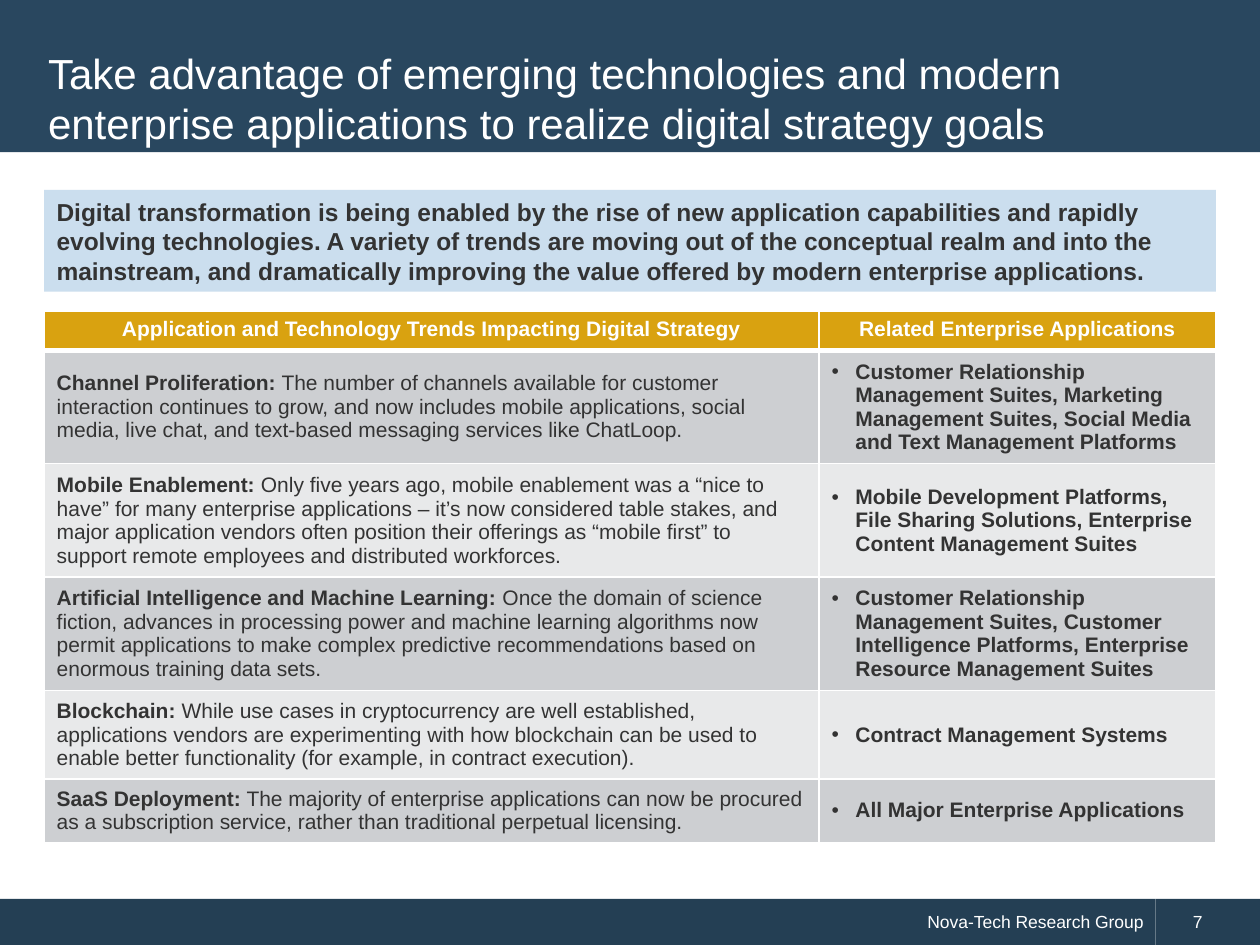
from lxml import etree
from pptx import Presentation
from pptx.dml.color import RGBColor
from pptx.enum.shapes import MSO_SHAPE
from pptx.enum.text import MSO_ANCHOR, PP_ALIGN
from pptx.oxml.ns import qn
from pptx.util import Cm, Pt

RECTANGLE = MSO_SHAPE.RECTANGLE
MIDDLE = MSO_ANCHOR.MIDDLE
TOP = MSO_ANCHOR.TOP
LEFT, CENTER, RIGHT = PP_ALIGN.LEFT, PP_ALIGN.CENTER, PP_ALIGN.RIGHT

WHITE = RGBColor(0xFF, 0xFF, 0xFF)
DARK_TEXT = RGBColor(0x33, 0x33, 0x33)
TITLE_BLUE = RGBColor(0x29, 0x47, 0x5F)
FOOTER_BLUE = RGBColor(0x24, 0x3F, 0x54)
PALE_BLUE = RGBColor(0xCB, 0xDE, 0xEE)
GOLD = RGBColor(0xD9, 0xA2, 0x10)
ROW_FILLS = (RGBColor(0xCD, 0xCF, 0xD2), RGBColor(0xE8, 0xE9, 0xEA))

# Font formats
TITLE_FONT = {"name": "Arial", "size": Pt(24), "bold": False}
BANNER_FONT = {"name": "Arial", "size": Pt(14), "bold": True}
FOOTER_FONT = {"name": "Arial", "size": Pt(10), "bold": False}
STRONG_FONT = {"name": "Arial", "size": Pt(12), "bold": True}
PLAIN_FONT = {**STRONG_FONT, "bold": False}

TITLE = ("Take advantage of emerging technologies and modern enterprise "
         "applications to realize digital strategy goals")
BANNER = ("Digital transformation is being enabled by the rise of new application "
          "capabilities and rapidly evolving technologies. A variety of trends are "
          "moving out of the conceptual realm and into the mainstream, and "
          "dramatically improving the value offered by modern enterprise applications.")
HEADERS = ("Application and Technology Trends Impacting Digital Strategy",
           "Related Enterprise Applications")

# Trend, description, related applications, row height in cm
TRENDS = [
    ("Channel Proliferation:",
     "The number of channels available for customer interaction continues to grow, "
     "and now includes mobile applications, social media, live chat, and text-based "
     "messaging services like ChatLoop.",
     "Customer Relationship Management Suites, Marketing Management Suites, "
     "Social Media and Text Management Platforms", 2.14),
    ("Mobile Enablement:",
     "Only five years ago, mobile enablement was a “nice to have” for many enterprise "
     "applications – it’s now considered table stakes, and major application vendors "
     "often position their offerings as “mobile first” to support remote employees "
     "and distributed workforces.",
     "Mobile Development Platforms, File Sharing Solutions, Enterprise Content "
     "Management Suites", 2.14),
    ("Artificial Intelligence and Machine Learning:",
     "Once the domain of science fiction, advances in processing power and machine "
     "learning algorithms now permit applications to make complex predictive "
     "recommendations based on enormous training data sets.",
     "Customer Relationship Management Suites, Customer Intelligence Platforms, "
     "Enterprise Resource Management Suites", 2.14),
    ("Blockchain:",
     "While use cases in cryptocurrency are well established, applications vendors "
     "are experimenting with how blockchain can be used to enable better "
     "functionality (for example, in contract execution).",
     "Contract Management Systems", 1.73),
    ("SaaS Deployment:",
     "The majority of enterprise applications can now be procured as a subscription "
     "service, rather than traditional perpetual licensing.",
     "All Major Enterprise Applications", 1.28),
]
HEADER_HEIGHT = 0.79
COLUMN_WIDTHS = (15.62, 8.0)


def add_run(paragraph, text, font_format, color):
    run = paragraph.add_run()
    run.text = text
    for name, value in font_format.items():
        setattr(run.font, name, value)
    run.font.color.rgb = color


def write_text(shape, text, font_format, color, align=LEFT):
    frame = shape.text_frame
    frame.word_wrap = True
    frame.vertical_anchor = MIDDLE
    paragraph = frame.paragraphs[0]
    paragraph.alignment = align
    add_run(paragraph, text, font_format, color)


def add_bar(slide, left, top, width, height, fill):
    shape = slide.shapes.add_shape(RECTANGLE, Cm(left), Cm(top), Cm(width), Cm(height))
    shape.shadow.inherit = False
    shape.fill.solid()
    shape.fill.fore_color.rgb = fill
    shape.line.fill.background()
    return shape


def indent(paragraph, left, first_line=0):
    properties = paragraph._p.get_or_add_pPr()
    properties.set("marL", str(Cm(left)))
    properties.set("indent", str(Cm(first_line)))
    return properties


def add_bullet(paragraph):
    properties = indent(paragraph, 0.48, -0.48)
    etree.SubElement(properties, qn("a:buFont"), typeface="Arial")
    etree.SubElement(properties, qn("a:buChar"), char="•")


def format_cell(cell, fill, anchor, edges):
    cell.vertical_anchor = anchor
    properties = cell._tc.get_or_add_tcPr()
    for edge, width in edges.items():
        line = etree.SubElement(properties, qn(f"a:{edge}"), w=str(Pt(width)))
        solid = etree.SubElement(line, qn("a:solidFill"))
        etree.SubElement(solid, qn("a:srgbClr"), val=str(WHITE))
    cell.fill.solid()
    cell.fill.fore_color.rgb = fill


def add_trend_table(slide):
    heights = [HEADER_HEIGHT] + [trend[-1] for trend in TRENDS]
    table = slide.shapes.add_table(
        len(heights), len(COLUMN_WIDTHS), Cm(0.89), Cm(6.27),
        Cm(sum(COLUMN_WIDTHS)), Cm(sum(heights))).table
    for column, width in zip(table.columns, COLUMN_WIDTHS):
        column.width = Cm(width)
    for row, height in zip(table.rows, heights):
        row.height = Cm(height)

    # Header row, with a thick line below it
    thin = {"lnL": 1, "lnR": 1, "lnT": 1, "lnB": 1}
    for index, header in enumerate(HEADERS):
        cell = table.cell(0, index)
        format_cell(cell, GOLD, TOP, {**thin, "lnB": 3})
        paragraph = cell.text_frame.paragraphs[0]
        paragraph.alignment = CENTER
        add_run(paragraph, header, STRONG_FONT, WHITE)

    # Trend rows in alternating greys
    for index, (trend, description, applications, _) in enumerate(TRENDS):
        edges = {**thin, "lnT": 1 if index else 3}
        cells = [table.cell(index + 1, column) for column in range(2)]
        for cell in cells:
            format_cell(cell, ROW_FILLS[index % 2], MIDDLE, edges)
        trend_paragraph, applications_paragraph = (
            cell.text_frame.paragraphs[0] for cell in cells)
        add_run(trend_paragraph, trend, STRONG_FONT, DARK_TEXT)
        add_run(trend_paragraph, " " + description, PLAIN_FONT, DARK_TEXT)
        add_bullet(applications_paragraph)
        add_run(applications_paragraph, applications, STRONG_FONT, DARK_TEXT)


def main():
    presentation = Presentation()
    presentation.slide_width = Cm(25.4)
    presentation.slide_height = Cm(19.05)
    slide = presentation.slides.add_slide(presentation.slide_layouts[6])

    # Footer
    footer = add_bar(slide, 0, 18.12, 23.3, 0.93, FOOTER_BLUE)
    write_text(footer, "Nova-Tech Research Group", FOOTER_FONT, WHITE, RIGHT)
    page_number = add_bar(slide, 23.3, 18.12, 2.1, 0.93, FOOTER_BLUE)
    write_text(page_number, "7", FOOTER_FONT, WHITE)
    indent(page_number.text_frame.paragraphs[0], 0.5)

    # Title
    add_bar(slide, 0, -0.05, 25.4, 3.12, TITLE_BLUE)
    title = slide.shapes.add_textbox(Cm(0.72), Cm(0.75), Cm(23.95), Cm(2.44))
    write_text(title, TITLE, TITLE_FONT, WHITE)

    # Trends and key message
    add_trend_table(slide)
    banner = add_bar(slide, 0.89, 3.83, sum(COLUMN_WIDTHS), 2.05, PALE_BLUE)
    write_text(banner, BANNER, BANNER_FONT, DARK_TEXT)

    presentation.save("out.pptx")


if __name__ == "__main__":
    main()
